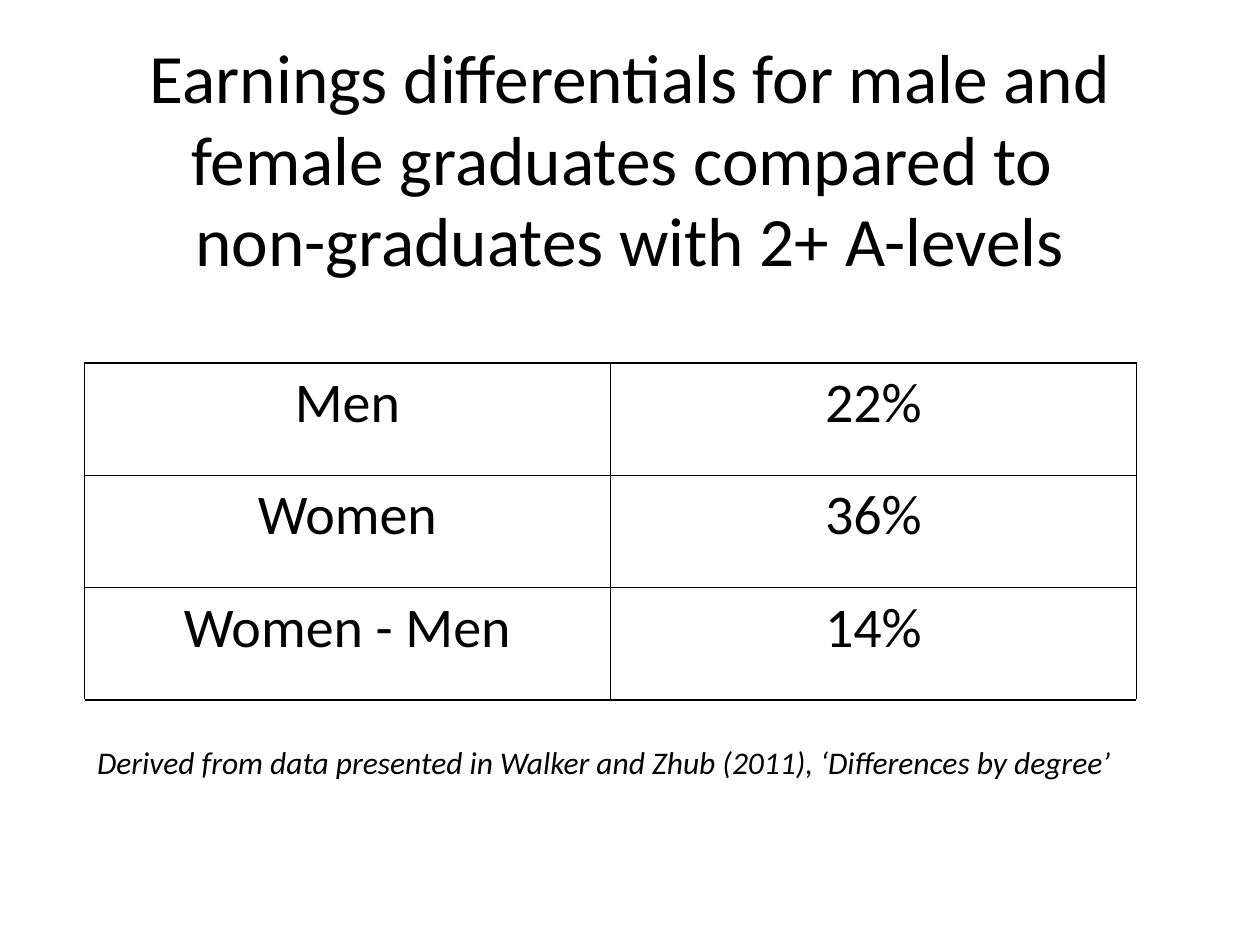
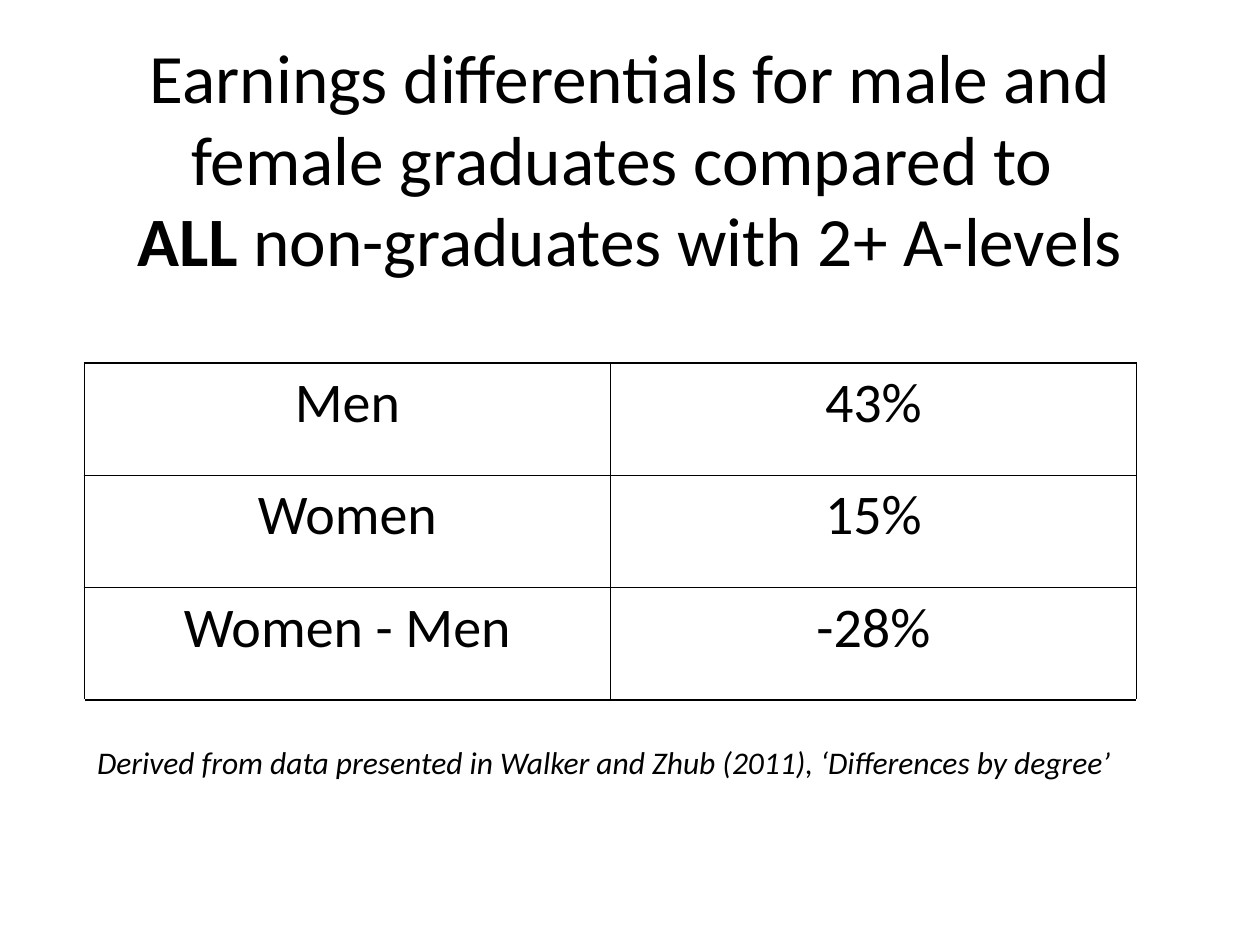
from pptx import Presentation
from pptx.dml.color import RGBColor
from pptx.enum.text import MSO_ANCHOR, MSO_AUTO_SIZE, PP_ALIGN
from pptx.oxml import parse_xml
from pptx.oxml.ns import nsdecls
from pptx.util import Inches, Pt

COLORS = {"ink": "000000", "paper": "FFFFFF"}
FONT = "Calibri"
TITLE_START = "Earnings differentials for male and female graduates compared to "
GROUPS = ["Men", "Women", "Women - Men"]
CITATION = "Derived from data presented in Walker and Zhub (2011), ‘Differences by degree’"

# Emphasised word, rest of the title's last line, earnings differentials
COMPARISONS = [
    ("", "non-graduates with 2+ A-levels", ["22%", "36%", "14%"]),
    ("ALL", " non-graduates with 2+ A-levels", ["43%", "15%", "-28%"]),
]


def set_font(paragraph, size, italic=False):
    font = paragraph.font
    font.name, font.size, font.italic = FONT, Pt(size), italic
    font.bold = False
    font.color.rgb = RGBColor.from_string(COLORS["ink"])


def fill_and_border(cell, sides):
    """Draw thin lines on the given sides (L, R, T, B) over a plain fill."""
    cell.fill.solid()
    cell.fill.fore_color.rgb = RGBColor.from_string(COLORS["paper"])
    properties = cell._tc.get_or_add_tcPr()
    for position, side in enumerate(sides):
        properties.insert(position, parse_xml(
            f'<a:ln{side} {nsdecls("a")} w="12700"><a:solidFill>'
            f'<a:srgbClr val="{COLORS["ink"]}"/></a:solidFill></a:ln{side}>'))


prs = Presentation()
prs.slide_width, prs.slide_height = Inches(10), Inches(7.5)

for emphasis, title_end, differentials in COMPARISONS:
    slide = prs.slides.add_slide(prs.slide_layouts[5])

    title = slide.shapes.title
    title.left, title.top = Inches(0.51), Inches(0.3)
    title.width, title.height = Inches(8.98), Inches(1.95)
    title.text_frame.auto_size = MSO_AUTO_SIZE.NONE
    title.text_frame.vertical_anchor = MSO_ANCHOR.MIDDLE
    heading = title.text_frame.paragraphs[0]
    heading.alignment = PP_ALIGN.CENTER
    heading.line_spacing = 0.98
    set_font(heading, 39.6)
    heading.add_run().text = TITLE_START
    heading.add_line_break()
    if emphasis:
        strong = heading.add_run()
        strong.text = emphasis
        strong.font.bold = True
    heading.add_run().text = title_end

    earnings = slide.shapes.add_table(
        len(GROUPS) + 1, 2, Inches(0.67), Inches(2.88), Inches(8.35), Inches(3.57)).table
    earnings.first_row = earnings.horz_banding = False
    for row, values in enumerate(zip(GROUPS, differentials)):
        for column, value in enumerate(values):
            cell = earnings.cell(row, column)
            cell.text = value
            cell.text_frame.paragraphs[0].alignment = PP_ALIGN.CENTER
            set_font(cell.text_frame.paragraphs[0], 32)
            fill_and_border(cell, "LRTB")

    citation, covered = earnings.cell(len(GROUPS), 0), earnings.cell(len(GROUPS), 1)
    citation.merge(covered)
    citation.text = CITATION
    citation.margin_top = Inches(0.35)
    set_font(citation.text_frame.paragraphs[0], 18, italic=True)
    for cell in (citation, covered):
        fill_and_border(cell, "T")

prs.save("out.pptx")
